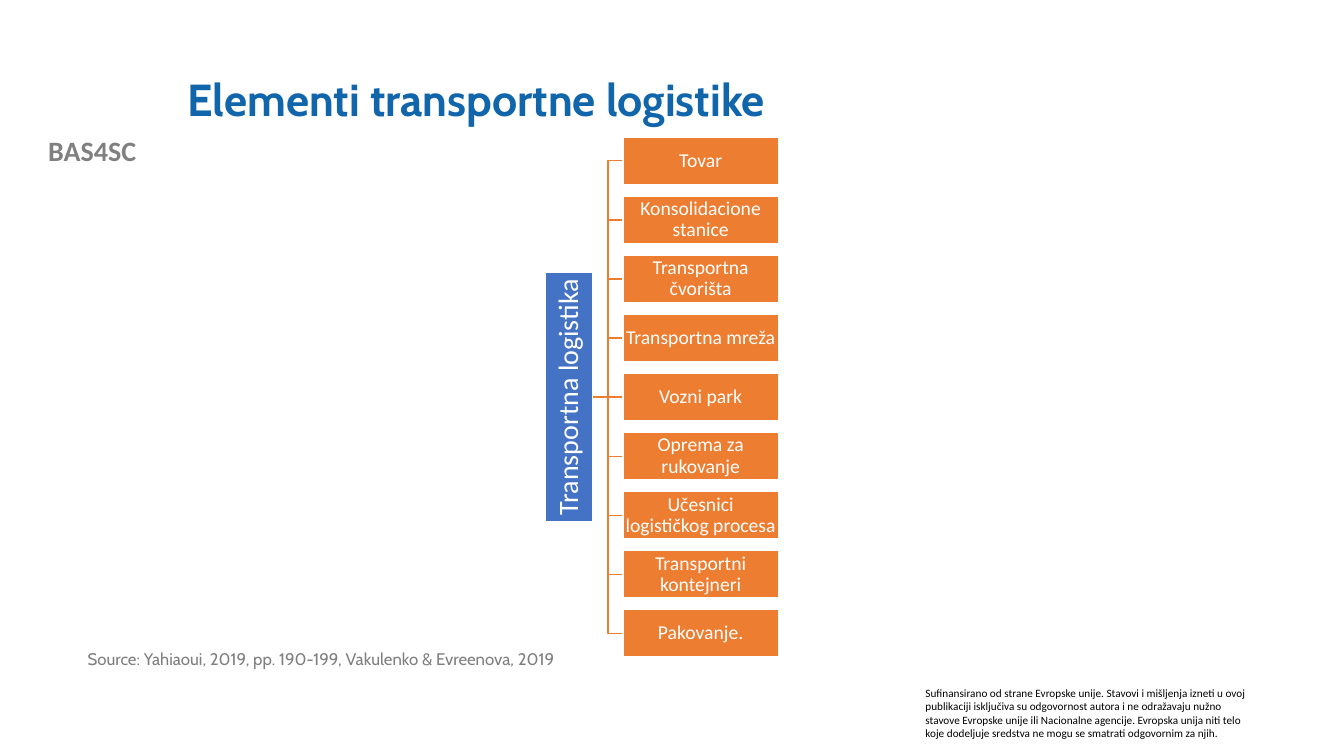
from dataclasses import dataclass

from lxml import etree
from pptx import Presentation
from pptx.dml.color import RGBColor
from pptx.enum.shapes import MSO_CONNECTOR, MSO_SHAPE
from pptx.enum.text import MSO_ANCHOR, PP_ALIGN
from pptx.oxml.ns import qn
from pptx.util import Inches, Pt

RECTANGLE = MSO_SHAPE.RECTANGLE
STRAIGHT = MSO_CONNECTOR.STRAIGHT
TOP, MIDDLE = MSO_ANCHOR.TOP, MSO_ANCHOR.MIDDLE
LEFT, CENTER = PP_ALIGN.LEFT, PP_ALIGN.CENTER


@dataclass(frozen=True)
class Theme:
    heading_font: str = "Cabin"
    body_font: str = "Calibri"
    title_color: RGBColor = RGBColor(0x10, 0x65, 0xAB)
    label_color: RGBColor = RGBColor(0x80, 0x80, 0x80)
    source_color: RGBColor = RGBColor(0x7F, 0x7F, 0x7F)
    root_color: RGBColor = RGBColor(0x44, 0x72, 0xC4)
    branch_color: RGBColor = RGBColor(0xED, 0x7D, 0x31)
    black: RGBColor = RGBColor(0, 0, 0)
    white: RGBColor = RGBColor(0xFF, 0xFF, 0xFF)
    title_size: int = 32
    label_size: int = 20
    branch_size: int = 14
    source_size: int = 12
    notice_size: int = 8
    line_width: int = 1


THEME = Theme()

ROOT = "Transportna logistika"
BRANCHES = [
    "Tovar",
    "Konsolidacione stanice",
    "Transportna čvorišta",
    "Transportna mreža",
    "Vozni park",
    "Oprema za rukovanje",
    "Učesnici logističkog procesa",
    "Transportni kontejneri",
    "Pakovanje.",
]
NOTICE = (
    "Sufinansirano od strane Evropske unije. Stavovi i mišljenja izneti u ovoj "
    "publikaciji isključiva su odgovornost autora i ne odražavaju nužno stavove "
    "Evropske unije ili Nacionalne agencije. Evropska unija niti telo koje "
    "dodeljuje sredstva ne mogu se smatrati odgovornim za njih."
)

# Tree geometry in inches
BOX_HEIGHT = 0.47
BRANCH_LEFT, BRANCH_WIDTH = 6.18, 1.54
FIRST_TOP, LAST_TOP = 1.36, 6.05
PITCH = (LAST_TOP - FIRST_TOP) / (len(BRANCHES) - 1)
ROOT_LENGTH, ROOT_RIGHT = 2.47, 5.88
TRUNK_X = (ROOT_RIGHT + BRANCH_LEFT) / 2
CENTER_Y = (FIRST_TOP + LAST_TOP + BOX_HEIGHT) / 2


def write_text(shape, text, *, size, color, font=THEME.body_font, bold=False,
               align=LEFT, anchor=TOP, line_spacing=None, inset=None):
    frame = shape.text_frame
    frame.word_wrap = True
    frame.vertical_anchor = anchor
    if inset is not None:
        frame.margin_left = frame.margin_right = Inches(inset)
        frame.margin_top = frame.margin_bottom = Inches(inset)
    paragraph = frame.paragraphs[0]
    paragraph.alignment = align
    if line_spacing:
        paragraph.line_spacing = line_spacing
    run = paragraph.add_run()
    run.text = text
    run.font.name = font
    run.font.size = Pt(size)
    run.font.bold = bold
    run.font.color.rgb = color


def add_text(slide, box, text, **text_format):
    shape = slide.shapes.add_textbox(*map(Inches, box))
    write_text(shape, text, **text_format)


def add_box(slide, box, text, fill, size, rotation=0):
    shape = slide.shapes.add_shape(RECTANGLE, *map(Inches, box))
    shape.rotation = rotation
    shape.shadow.inherit = False
    shape.fill.solid()
    shape.fill.fore_color.rgb = fill
    shape.line.color.rgb = THEME.white
    shape.line.width = Pt(THEME.line_width)
    write_text(shape, text, size=size, color=THEME.white, align=CENTER,
               anchor=MIDDLE, line_spacing=0.9, inset=0.01)


def style_line(shape):
    shape.line.color.rgb = THEME.branch_color
    shape.line.width = Pt(THEME.line_width)


def add_elbow(slide, end_y):
    """Draw the bent line from the root box to a branch at height end_y."""
    points = [(ROOT_RIGHT, CENTER_Y), (TRUNK_X, CENTER_Y),
              (TRUNK_X, end_y), (BRANCH_LEFT, end_y)]
    start, *rest = [(Inches(x), Inches(y)) for x, y in points]
    builder = slide.shapes.build_freeform(*start)
    builder.add_line_segments(rest, close=False)
    shape = builder.convert_to_shape()
    shape.shadow.inherit = False
    shape.fill.background()
    style_line(shape)


def add_straight_link(slide):
    link = slide.shapes.add_connector(
        STRAIGHT, Inches(ROOT_RIGHT), Inches(CENTER_Y),
        Inches(BRANCH_LEFT), Inches(CENTER_Y))
    style_line(link)
    etree.SubElement(link.element.spPr, qn("a:effectLst"))


def add_tree(slide):
    tops = [FIRST_TOP + index * PITCH for index in range(len(BRANCHES))]
    middle = len(BRANCHES) // 2
    for index, top in enumerate(tops):
        if index == middle:
            add_straight_link(slide)
        else:
            add_elbow(slide, top + BOX_HEIGHT / 2)

    root_left = ROOT_RIGHT - (BOX_HEIGHT + ROOT_LENGTH) / 2
    add_box(slide, (root_left, CENTER_Y - BOX_HEIGHT / 2, ROOT_LENGTH, BOX_HEIGHT),
            ROOT, THEME.root_color, THEME.label_size, rotation=270)
    for top, text in zip(tops, BRANCHES):
        add_box(slide, (BRANCH_LEFT, top, BRANCH_WIDTH, BOX_HEIGHT),
                text, THEME.branch_color, THEME.branch_size)


def main():
    presentation = Presentation()
    presentation.slide_width = Inches(13.33)
    presentation.slide_height = Inches(7.5)
    slide = presentation.slides.add_slide(presentation.slide_layouts[6])

    add_text(slide, (0, 1.28, 1.83, 0.44), "BAS4SC", size=THEME.label_size,
             color=THEME.label_color, bold=True, align=CENTER)
    add_text(slide, (9.08, 6.76, 3.42, 0.64), NOTICE,
             size=THEME.notice_size, color=THEME.black)
    add_text(slide, (1.76, 0.4, 10.66, 1.22), "Elementi transportne logistike",
             size=THEME.title_size, color=THEME.title_color, bold=True,
             font=THEME.heading_font, anchor=MIDDLE, line_spacing=0.9)
    add_text(slide, (0.77, 6.41, 5.6, 0.52),
             "Source: Yahiaoui, 2019, pp. 190-199, Vakulenko & Evreenova, 2019",
             size=THEME.source_size, color=THEME.source_color,
             font=THEME.heading_font, line_spacing=0.9)
    add_tree(slide)
    presentation.save("out.pptx")


if __name__ == "__main__":
    main()
